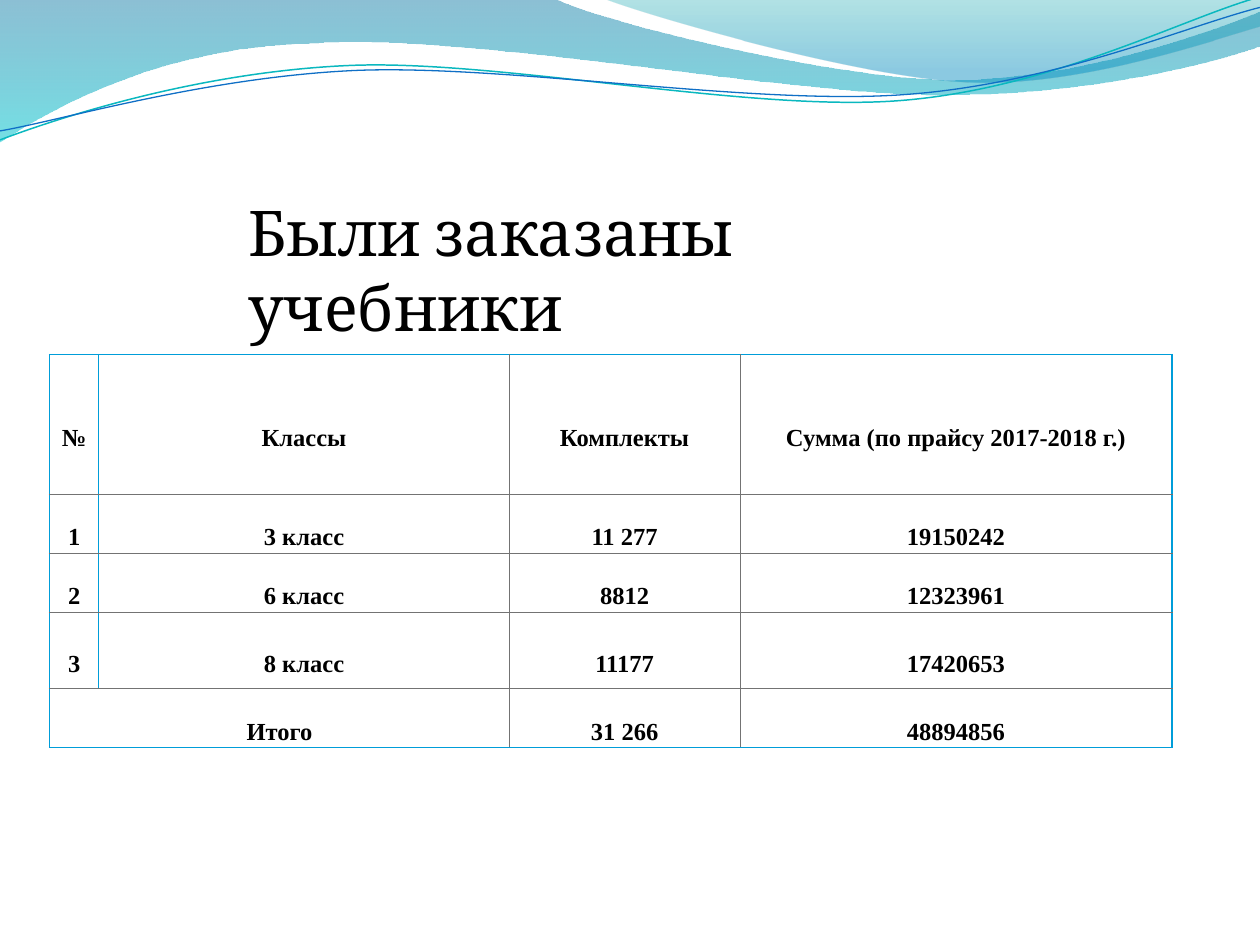
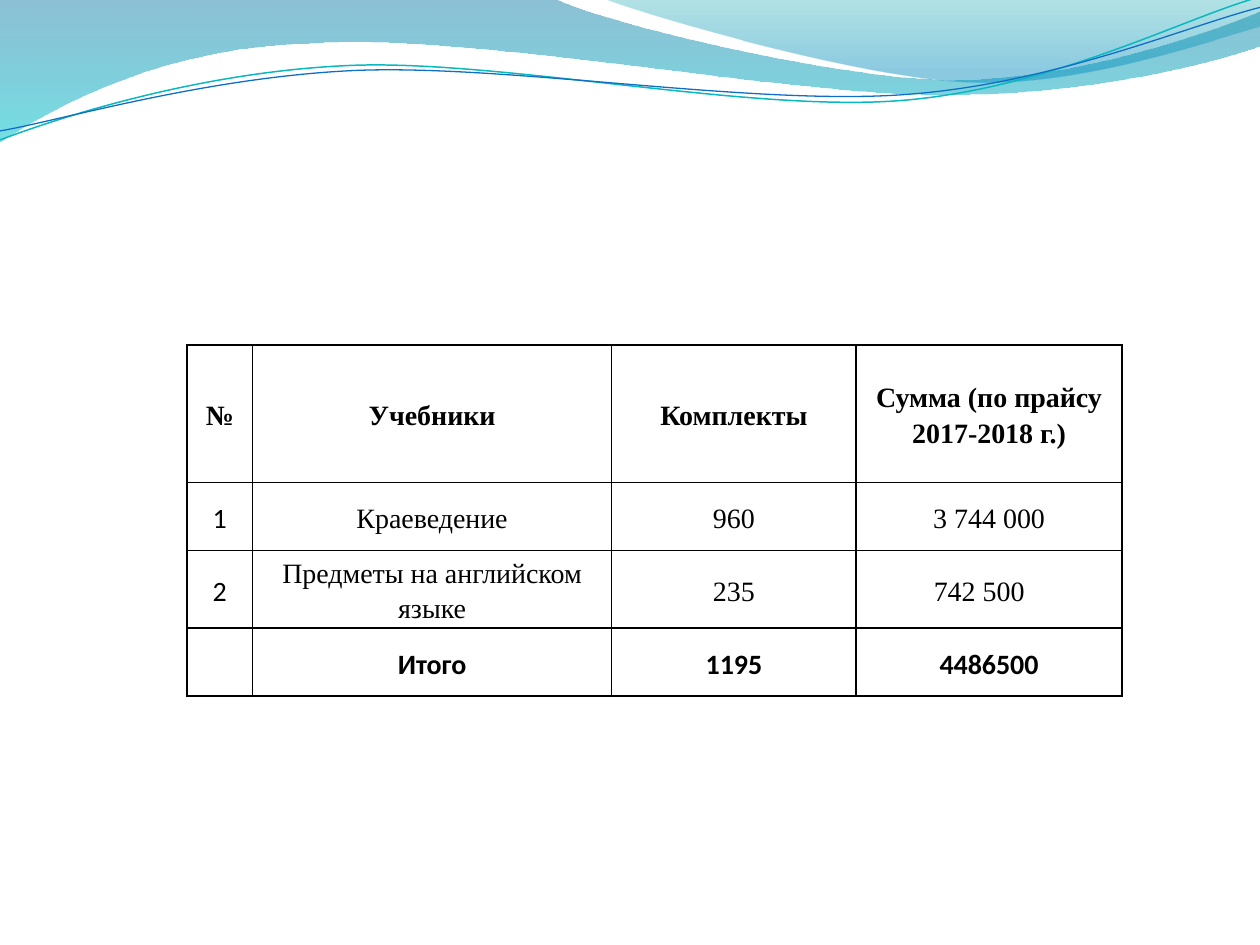
import math
from dataclasses import dataclass

from lxml import etree
from pptx import Presentation, util as u
from pptx.dml.color import RGBColor
from pptx.enum import text as t
from pptx.oxml import ns


@dataclass(frozen=True)
class Theme:
    """Colours, fonts and type sizes of the deck."""
    ink: str = "000000"
    blue: str = "009DD9"
    gray: str = "737373"
    teal: str = "0AB8BF"
    navy: str = "0F6FC6"
    band: tuple = ((0, "0074A1", 45), (1, "00C6CF", 55))
    veil: tuple = ((0, "00A1A9", 30), (0.8, "008BBF", 45))
    head: str = "Cambria"
    serif: str = "Times New Roman"
    sans: str = "Calibri"
    title: int = 36
    large: int = 16
    small: int = 14


@dataclass(frozen=True)
class Box:
    """A region in centimetres."""
    left: float
    top: float
    width: float
    height: float


@dataclass(frozen=True)
class Look:
    """Type and rules of one table."""
    size: int
    lead: float
    outer: tuple
    inner: tuple


THEME = Theme()
PAGE = Box(0, 0, 25.4, 19.05)
TILT = 2.7

BAND = [[(0, 0)], [(11.18, -0.03)],
        [(12.09, 0.43), (16.87, 1.6), (19.25, 1.6)],
        [(21.67, 1.6), (24.33, 0.66), (25.4, 0.23)], [(25.43, 0.91)],
        [(24.97, 1.12), (22.1, 1.93), (18.95, 1.91)],
        [(15.8, 1.91), (9.7, 0.71), (6.53, 0.86)],
        [(3.28, 0.91), (1.17, 2.11), (-0.03, 2.87)]]
VEIL = [[(12.17, -0.03)],
        [(12.93, 0.28), (17.32, 1.57), (19.53, 1.65)],
        [(21.74, 1.75), (24.41, 0.81), (25.4, 0.53)], [(25.4, 0)]]
TEAL = [[(0, 2.82)],
        [(1.22, 2.36), (4.01, 1.45), (7.04, 1.32)],
        [(10.03, 1.19), (15.06, 2.26), (18.11, 2.03)],
        [(21.16, 1.8), (23.83, 0.38), (25.35, -0.05)]]
NAVY = [[(0, 2.64)],
        [(1.19, 2.44), (4.17, 1.55), (7.19, 1.42)],
        [(10.24, 1.3), (15.16, 2.13), (18.21, 1.91)],
        [(21.23, 1.7), (23.9, 0.53), (25.4, 0.15)]]

ORDERS = [["№", "Классы", "Комплекты", "Сумма (по прайсу 2017-2018 г.)"],
          ["1", "3 класс", "11 277", "19150242"],
          ["2", "6 класс", "8812", "12323961"],
          ["3", "8 класс", "11177", "17420653"],
          ["Итого", "", "31 266", "48894856"]]
EXTRAS = [["№", "Учебники", "Комплекты", "Сумма (по прайсу 2017-2018 г.)"],
          ["1", "Краеведение", "960", "3 744 000"],
          ["2", "Предметы на английском языке", "235", "742 500"],
          ["", "Итого", "1195", "4486500"]]


def level(steps, mid):
    """Turn the steps clockwise by the tilt around a point."""
    cos, sin = math.cos(math.radians(TILT)), math.sin(math.radians(TILT))
    return [[(mid[0] + (x - mid[0]) * cos - (y - mid[1]) * sin,
              mid[1] + (x - mid[0]) * sin + (y - mid[1]) * cos)
             for x, y in step] for step in steps]


def curve(shapes, box, steps, close):
    """Draw one outline of lines and Bezier curves inside the box."""
    dots = [(u.Cm(box.left + x), u.Cm(box.top + y)) for step in steps for x, y in step]
    pen = shapes.build_freeform(*dots[0])
    pen.add_line_segments(dots[1:], close=close)
    shape = pen.convert_to_shape()
    shape.shadow.inherit = False
    lines = iter(list(shape.element.iter(ns.qn("a:lnTo"))))
    for step in steps[1:]:
        group = [next(lines) for _ in step]
        if len(group) == 3:
            bend = etree.Element(ns.qn("a:cubicBezTo"))
            group[0].addprevious(bend)
            for line in group:
                bend.append(line[0])
                line.getparent().remove(line)
    return shape


def shade(shape, stops):
    """Fill a shape with a see-through vertical gradient."""
    shape.line.fill.background()
    shape.fill.gradient()
    shape.fill.gradient_angle = 270
    for stop, (place, tint, alpha) in zip(shape.fill.gradient_stops, stops):
        stop.position = place
        stop.color.rgb = RGBColor.from_string(tint)
        for node in shape.element.iter(ns.qn("a:srgbClr")):
            if node.get("val") == tint:
                etree.SubElement(node, ns.qn("a:alpha")).set("val", str(alpha * 1000))


def waves(deck, slide, box):
    """Draw the top waves and hand them to the master."""
    parts = []
    for steps, stops in ((BAND, THEME.band), (VEIL, THEME.veil)):
        shape = curve(slide.shapes, box, steps, True)
        shade(shape, stops)
        parts.append(shape)
    for steps, mid, tint, width in ((TEAL, (12.67, 1.46), THEME.teal, 0.85),
                                    (NAVY, (12.69, 1.5), THEME.navy, 0.75)):
        shape = curve(slide.shapes, box, level(steps, mid), False)
        shape.rotation = 360 - TILT
        shape.fill.background()
        shape.line.color.rgb = RGBColor.from_string(tint)
        shape.line.width = u.Pt(width)
        parts.append(shape)
    for num, shape in enumerate(parts, 100):
        shape.element.nvSpPr.cNvPr.set("id", str(num))
        deck.slide_master.shapes.element.append(shape.element)


def write(para, words, font, size, bold=False):
    """Add one run of text."""
    run = para.add_run()
    run.text = words
    run.font.name = font
    run.font.size = u.Pt(size)
    run.font.bold = bold
    run.font.color.rgb = RGBColor.from_string(THEME.ink)


def heading(slide, box, words):
    """Place and format the title."""
    title = slide.shapes.title
    title.left, title.top = u.Cm(box.left), u.Cm(box.top)
    title.width, title.height = u.Cm(box.width), u.Cm(box.height)
    frame = title.text_frame
    frame.word_wrap = True
    frame.auto_size = t.MSO_AUTO_SIZE.SHAPE_TO_FIT_TEXT
    frame.vertical_anchor = t.MSO_ANCHOR.TOP
    para = frame.paragraphs[0]
    para.alignment = t.PP_ALIGN.LEFT
    write(para, words, THEME.head, THEME.title)


def rule(cell, side, tint, width):
    """Draw one border of a cell."""
    line = etree.SubElement(cell._tc.get_or_add_tcPr(), ns.qn("a:ln" + side))
    line.set("w", str(u.Pt(width)))
    fill = etree.SubElement(line, ns.qn("a:solidFill"))
    etree.SubElement(fill, ns.qn("a:srgbClr")).set("val", tint)


def frame(cell, row, col, size, look):
    """Draw the four borders of a cell."""
    rows, cols = size
    edges = {"L": col < 2, "T": row == 0, "B": row == rows - 1,
             "R": col == cols - 1 or (col == 0 and not cell.is_merge_origin)}
    for side in "LRTB":
        rule(cell, side, *(look.outer if edges[side] else look.inner))


def finish(para, font, size):
    """Give the paragraph end the type of its text."""
    end = etree.SubElement(para._p, ns.qn("a:endParaRPr"))
    end.set("sz", str(size * 100))
    etree.SubElement(end, ns.qn("a:latin")).set("typeface", font)


def grid(slide, box, data, cols, rows, look, style, spans=()):
    """Build a table, scaling its columns and rows to the box."""
    size = len(data), len(cols)
    table = slide.shapes.add_table(*size, u.Cm(box.left), u.Cm(box.top),
                                   u.Cm(box.width), u.Cm(box.height)).table
    table.first_row = table.horz_banding = False
    for item, part in zip(table.columns, cols):
        item.width = u.Cm(box.width * part / sum(cols))
    for item, part in zip(table.rows, rows):
        item.height = u.Cm(box.height * part / sum(rows))
    for start, end in spans:
        table.cell(*start).merge(table.cell(*end))
    for row, line in enumerate(data):
        for col, words in enumerate(line):
            cell = table.cell(row, col)
            frame(cell, row, col, size, look)
            cell.fill.background()
            cell.margin_left = cell.margin_right = u.Cm(0.18)
            cell.margin_top = cell.margin_bottom = 0
            cell.vertical_anchor = t.MSO_ANCHOR.MIDDLE
            para = cell.text_frame.paragraphs[0]
            para.alignment = t.PP_ALIGN.CENTER
            para.line_spacing = look.lead
            para.space_before = para.space_after = u.Pt(0)
            font, bold = style(row, col)
            if words:
                write(para, words, font, look.size, bold)
            finish(para, font, look.size)
    return table


def orders(slide, box):
    """Fill the slide of ordered textbooks by class."""
    heading(slide, Box(box.left + 4.75, box.top + 3.77, 15.47, 1.8),
            "Были заказаны учебники")
    look = Look(THEME.small, 2.0, (THEME.blue, 1), (THEME.gray, 0.5))
    grid(slide, Box(box.left + 1, box.top + 7.15, 22.63, 7.57), ORDERS,
         (0.39, 3.26, 1.83, 3.43), (1.1, 0.42, 0.42, 0.6, 0.41), look,
         lambda row, col: (THEME.serif, True), [((4, 0), (4, 1))])


def extras(slide, box):
    """Fill the slide of other textbooks."""
    def style(row, col):
        """Pick font and weight for a cell."""
        last = row == len(EXTRAS) - 1
        sans = last or (row > 0 and col == 0)
        return THEME.sans if sans else THEME.serif, row == 0 or last

    black = THEME.ink, 1
    look = Look(THEME.large, 1.15, black, black)
    table = grid(slide, Box(box.left + 3.77, box.top + 6.95, 18.85, 6.98), EXTRAS,
                 (0.52, 2.85, 1.94, 2.11), (1.09, 0.54, 0.57, 0.54), look, style)
    table.cell(2, 3).margin_right = u.Cm(0.58)


def main():
    """Build and save the deck."""
    deck = Presentation()
    deck.slide_width, deck.slide_height = u.Cm(PAGE.width), u.Cm(PAGE.height)
    titled, blank = deck.slide_layouts[5], deck.slide_layouts[6]
    first = deck.slides.add_slide(titled)
    waves(deck, first, PAGE)
    orders(first, PAGE)
    extras(deck.slides.add_slide(blank), PAGE)
    deck.save("out.pptx")


if __name__ == "__main__":
    main()
